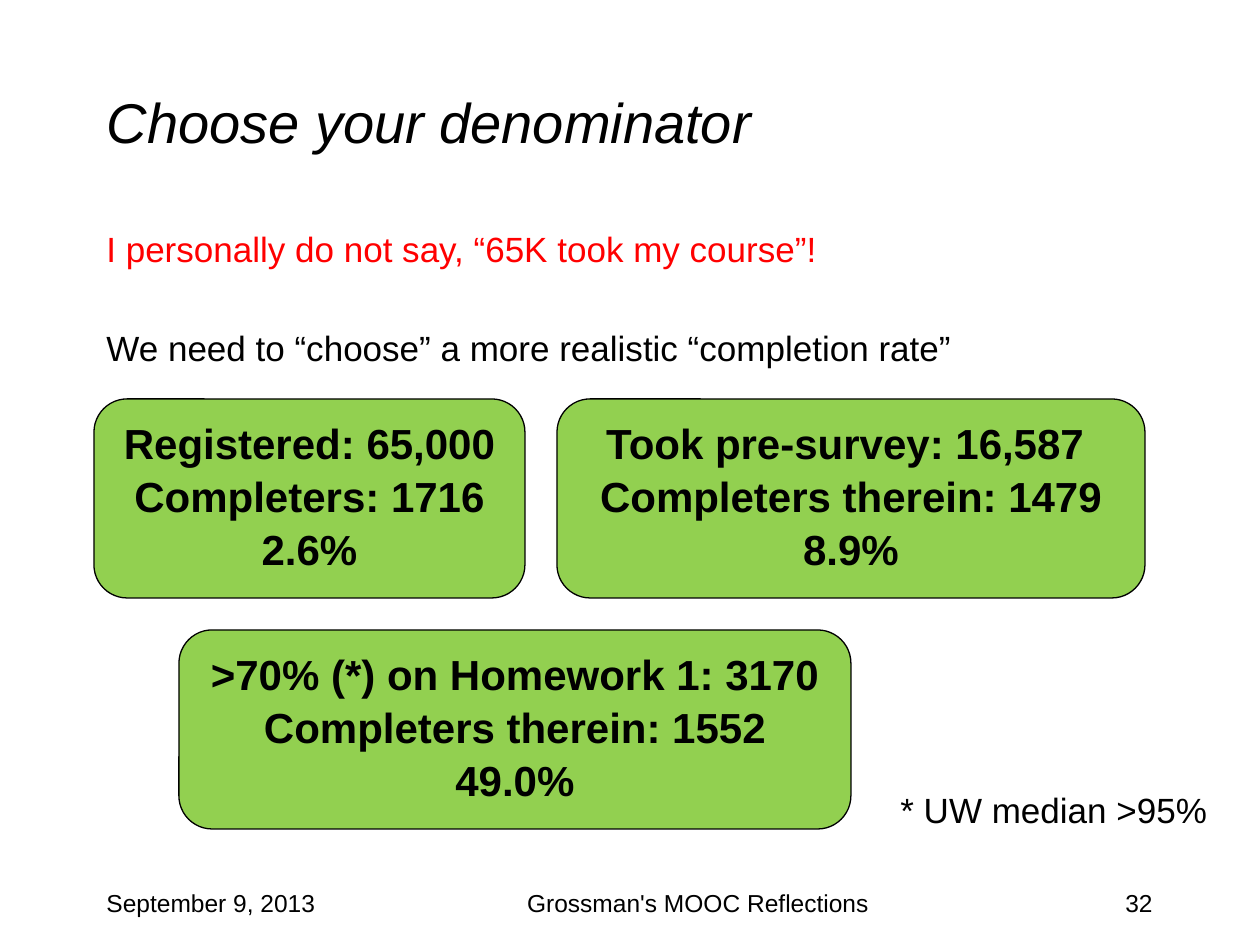
from dataclasses import dataclass

from pptx import Presentation
from pptx.dml.color import RGBColor
from pptx.enum.shapes import MSO_SHAPE
from pptx.enum.text import MSO_ANCHOR, PP_ALIGN
from pptx.slide import Slide
from pptx.util import Emu, Pt

PX = 914400 // 126
COLORS = {"ink": "000000", "alert": "FF0000", "box": "92D050", "paper": "FFFFFF"}


def color(name):
    return RGBColor.from_string(COLORS[name])


def lengths(box):
    return [Emu(length * PX) for length in box]


@dataclass
class SlideBuilder:
    slide: Slide
    font_name: str = "Arial"

    def set_text(self, shape, lines, size, align=PP_ALIGN.LEFT, anchor=MSO_ANCHOR.TOP,
                 bold=False, italic=False):
        frame = shape.text_frame
        frame.text = "\n".join(lines)
        frame.word_wrap = True
        frame.vertical_anchor = anchor
        for paragraph in frame.paragraphs:
            paragraph.alignment = align
            font = paragraph.font
            font.name, font.size = self.font_name, Pt(size)
            font.bold, font.italic = bold, italic
            font.color.rgb = color("ink")
        return frame

    def title(self, text, box):
        shape = self.slide.shapes.title
        shape.left, shape.top, shape.width, shape.height = lengths(box)
        self.set_text(shape, [text], 32, anchor=MSO_ANCHOR.MIDDLE, italic=True)

    def text(self, lines, box, size, align=PP_ALIGN.LEFT):
        shape = self.slide.shapes.add_textbox(*lengths(box))
        return self.set_text(shape, lines, size, align=align)

    def rate_box(self, lines, box):
        shape = self.slide.shapes.add_shape(MSO_SHAPE.ROUNDED_RECTANGLE, *lengths(box))
        shape.shadow.inherit = False
        shape.fill.solid()
        shape.fill.fore_color.rgb = color("box")
        shape.line.color.rgb = color("ink")
        shape.line.width = Pt(0.75)
        frame = self.set_text(shape, lines, 24, align=PP_ALIGN.CENTER, bold=True)
        for paragraph in frame.paragraphs:
            paragraph.line_spacing = 1.05


def main():
    presentation = Presentation()
    presentation.slide_width, presentation.slide_height = lengths((1260, 945))
    slide = presentation.slides.add_slide(presentation.slide_layouts[5])
    slide.background.fill.solid()
    slide.background.fill.fore_color.rgb = color("paper")
    builder = SlideBuilder(slide)

    # Title and statements
    builder.title("Choose your denominator", (94, 42, 1071, 158))
    statements = builder.text(
        ["I personally do not say, “65K took my course”!",
         "We need to “choose” a more realistic “completion rate”"],
        (94, 221, 1071, 620), 20)
    first, second = statements.paragraphs
    first.font.color.rgb = color("alert")
    first.space_before = Pt(4)
    second.space_before = Pt(33)

    # Footer
    for text, left, width, align in (
            ("September 9, 2013", 94, 262, PP_ALIGN.LEFT),
            ("32", 903, 262, PP_ALIGN.RIGHT),
            ("Grossman's MOOC Reflections", 346, 704, PP_ALIGN.CENTER)):
        builder.text([text], (left, 882, width, 63), 14, align)

    # Completion rates
    box_height = 199
    for lines, left, top, width in (
            (["Registered: 65,000", "Completers: 1716 2.6%"], 94, 399, 431),
            (["Took pre-survey: 16,587 ", "Completers therein: 1479", "8.9%"],
             557, 399, 588),
            ([">70% (*) on Homework 1: 3170", "Completers therein: 1552", "49.0%"],
             179, 630, 672)):
        builder.rate_box(lines, (left, top, width, box_height))

    # Footnote
    builder.text(["* UW median >95%"], (888, 782, 340, 55), 20)

    presentation.save("out.pptx")


if __name__ == "__main__":
    main()
